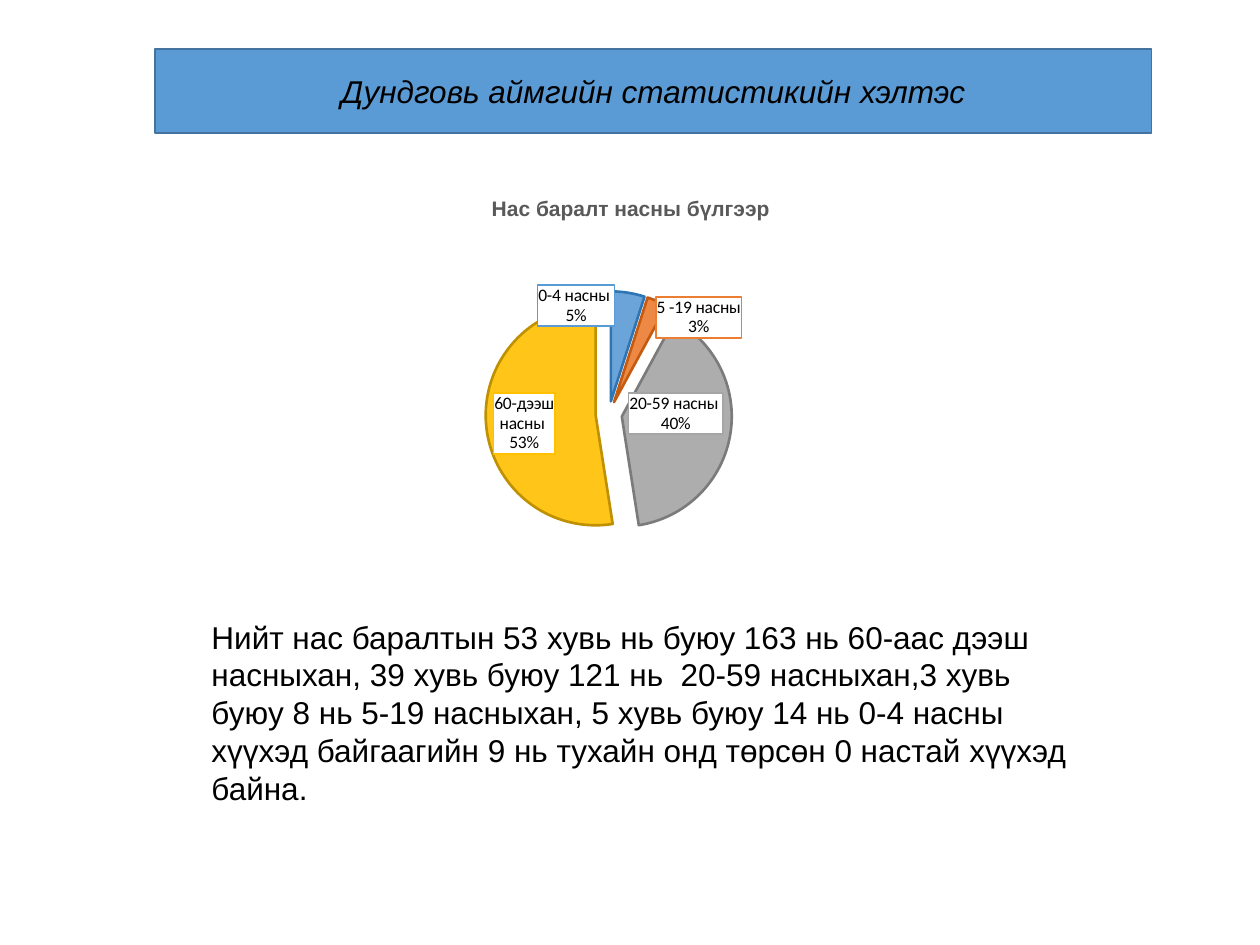
from lxml import etree
from pptx import Presentation
from pptx import util as u
from pptx.chart.data import CategoryChartData
from pptx.dml.color import RGBColor
from pptx.enum import chart as charts, text
from pptx.oxml import parse_xml
from pptx.oxml.ns import nsdecls, qn

WIDTH, HEIGHT = 10, 7.5
BANNER = (0.123, 0.052, 0.791, 0.089)
CHART = (0.256, 0.188, 0.494, 0.401)
SUMMARY = (0.158, 0.647, 0.705, 0.216)

AGE_GROUPS = [
    ("0-4 насны ", 5, "5B9BD5", "2E75B6", (-0.02, -0.04)),
    ("5 -19 насны", 3, "ED7D31", "C55A11", (0.14, -0.03)),
    ("20-59 насны ", 40, "A5A5A5", "7B7B7B", None),
    ("60-дээш насны ", 53, "FFC000", "BF9000", None),
]
SUMMARY_TEXT = (
    "Нийт нас баралтын 53 хувь нь буюу 163 нь 60-аас дээш насныхан, "
    "39 хувь буюу 121 нь  20-59 насныхан,3 хувь буюу 8 нь 5-19 насныхан, "
    "5 хувь буюу 14 нь 0-4 насны хүүхэд байгаагийн 9 нь тухайн онд төрсөн "
    "0 настай хүүхэд байна."
)


def color(value):
    return RGBColor.from_string(value)


def place(box):
    return [u.Inches(share * size) for share, size in zip(box, (WIDTH, HEIGHT) * 2)]


def style(font, name, size, value, bold=False, italic=False):
    font.name, font.size = name, u.Pt(size)
    font.bold, font.italic = bold, italic
    font.color.rgb = color(value)


def add_banner(page, box):
    banner = page.shapes.title
    banner.left, banner.top, banner.width, banner.height = place(box)
    banner.fill.solid()
    banner.fill.fore_color.rgb = color("5B9BD5")
    banner.line.color.rgb = color("43739E")
    banner.line.width = u.Pt(1)
    frame = banner.text_frame
    frame.text = "Дундговь аймгийн статистикийн хэлтэс"
    frame.vertical_anchor = text.MSO_ANCHOR.MIDDLE
    para = frame.paragraphs[0]
    para.alignment = text.PP_ALIGN.CENTER
    style(para.runs[0].font, "Arial", 18, "000000", italic=True)


def manual_layout(inner):
    return parse_xml(f'<c:layout {nsdecls("c")}><c:manualLayout>{inner}</c:manualLayout></c:layout>')


def label_xml(index, border, shift):
    label = parse_xml(
        f'<c:dLbl {nsdecls("c", "a")}><c:idx val="{index}"/>'
        '<c:numFmt formatCode="0&quot;%&quot;" sourceLinked="0"/>'
        '<c:spPr><a:solidFill><a:srgbClr val="FFFFFF"/></a:solidFill>'
        f'<a:ln w="12700"><a:solidFill><a:srgbClr val="{border}"/></a:solidFill></a:ln></c:spPr>'
        '<c:dLblPos val="inEnd"/><c:showLegendKey val="0"/><c:showVal val="1"/>'
        '<c:showCatName val="1"/><c:showSerName val="0"/><c:showPercent val="0"/>'
        '<c:showBubbleSize val="0"/><c:separator>\n</c:separator></c:dLbl>'
    )
    if shift:
        label.insert(1, manual_layout(f'<c:x val="{shift[0]}"/><c:y val="{shift[1]}"/>'))
    return label


def add_age_chart(page, box):
    data = CategoryChartData()
    data.categories = [group[0] for group in AGE_GROUPS]
    data.add_series("Series 1", [group[1] for group in AGE_GROUPS])
    chart = page.shapes.add_chart(charts.XL_CHART_TYPE.PIE, *place(box), data).chart
    style(chart.font, "Calibri", 10, "000000")
    chart.has_legend = False
    frame = chart.chart_title.text_frame
    frame.text = "Нас баралт насны бүлгээр "
    style(frame.paragraphs[0].runs[0].font, "Arial", 12, "595959", bold=True)

    plot = chart.plots[0]
    plot.vary_by_categories = True
    plot_area = chart.element.find(".//" + qn("c:plotArea"))
    for layout in plot_area.findall(qn("c:layout")):
        plot_area.remove(layout)
    plot_area.insert(0, manual_layout(
        '<c:layoutTarget val="inner"/><c:xMode val="edge"/><c:yMode val="edge"/>'
        '<c:x val="0.26"/><c:y val="0.3"/><c:w val="0.4"/><c:h val="0.65"/>'))

    series = plot.series[0]
    labels = series.data_labels
    labels.show_category_name = labels.show_value = True
    labels.position = charts.XL_LABEL_POSITION.INSIDE_END
    style(labels.font, "Calibri", 10, "000000")
    for index, (_, _, fill, edge, shift) in enumerate(AGE_GROUPS):
        point = series.points[index].format
        point.fill.solid()
        point.fill.fore_color.rgb = color(fill)
        point.line.color.rgb = color(edge)
        point.line.width = u.Pt(1.5)
        labels._element.insert(index, label_xml(index, fill, shift))
    for shade in series._element.findall(f'{qn("c:dPt")}/{qn("c:spPr")}/{qn("a:solidFill")}/{qn("a:srgbClr")}'):
        etree.SubElement(shade, qn("a:alpha")).set("val", "90000")
    series._element.find(qn("c:dPt")).addprevious(
        parse_xml(f'<c:explosion {nsdecls("c")} val="12"/>'))
    for slice_element in series._element.findall(qn("c:dPt")):
        slice_element.find(qn("c:spPr")).addprevious(
            parse_xml(f'<c:explosion {nsdecls("c")} val="12"/>'))


def add_summary(page, box):
    frame = page.shapes.add_textbox(*place(box)).text_frame
    frame.word_wrap = True
    frame.auto_size = text.MSO_AUTO_SIZE.SHAPE_TO_FIT_TEXT
    frame.text = SUMMARY_TEXT
    style(frame.paragraphs[0].runs[0].font, "Arial", 18, "000000")


def main():
    deck = Presentation()
    deck.slide_width, deck.slide_height = u.Inches(WIDTH), u.Inches(HEIGHT)
    page = deck.slides.add_slide(deck.slide_layouts[5])
    add_banner(page, BANNER)
    add_age_chart(page, CHART)
    add_summary(page, SUMMARY)
    deck.save("out.pptx")


if __name__ == "__main__":
    main()
